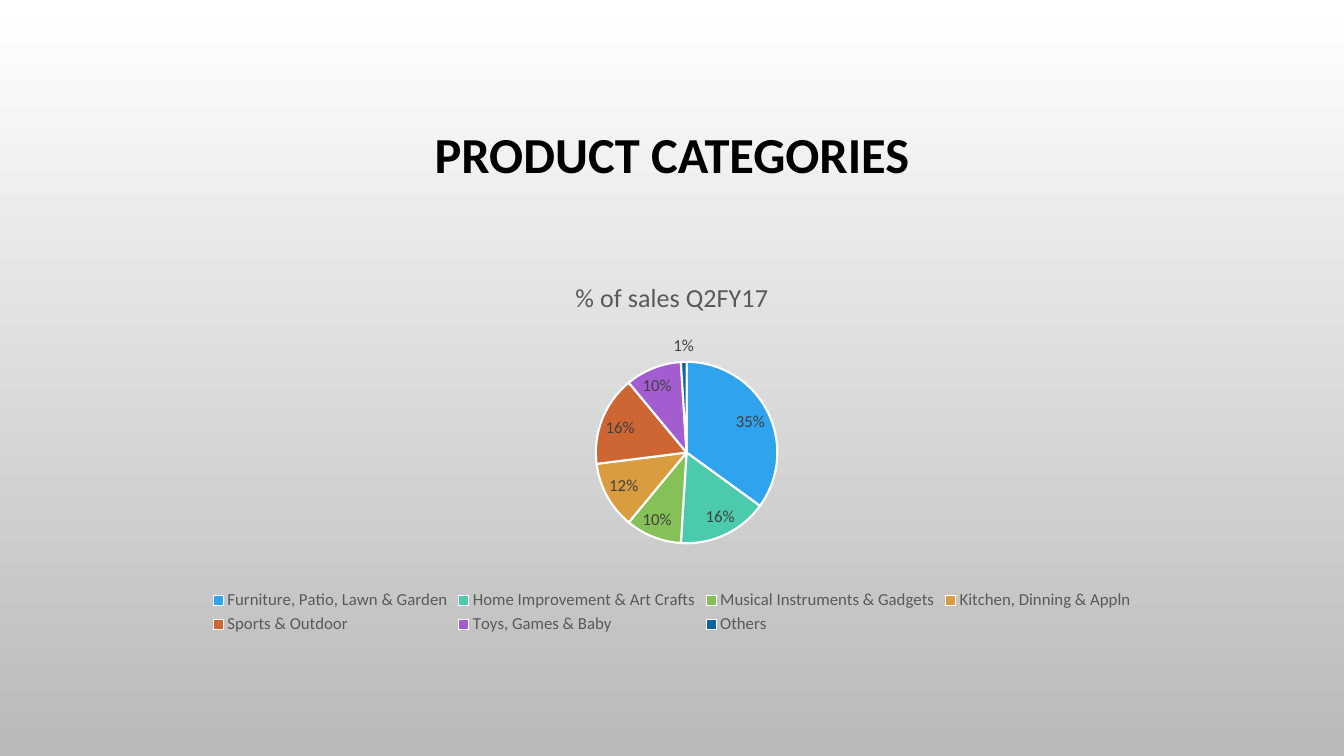
from lxml import etree
from pptx import Presentation
from pptx.chart.data import CategoryChartData
from pptx.dml.color import RGBColor
from pptx.enum.chart import XL_CHART_TYPE, XL_LABEL_POSITION, XL_LEGEND_POSITION
from pptx.enum.text import MSO_ANCHOR, PP_ALIGN
from pptx.oxml.ns import qn
from pptx.util import Inches, Pt

PIE = XL_CHART_TYPE.PIE
BEST_FIT = XL_LABEL_POSITION.BEST_FIT
BOTTOM = XL_LEGEND_POSITION.BOTTOM
MIDDLE = MSO_ANCHOR.MIDDLE
CENTER = PP_ALIGN.CENTER

FONT = "Calibri"
COLORS = {
    "top": "FFFFFF",
    "bottom": "B9B9B9",
    "title": "000000",
    "caption": "595959",
    "label": "404040",
    "border": "FFFFFF",
}
TITLE = "PRODUCT CATEGORIES"
CHART_TITLE = "% of sales Q2FY17"
SALES = [
    ("Furniture, Patio, Lawn & Garden", 0.35, "2FA3EE"),
    ("Home Improvement & Art Crafts", 0.16, "4BCAAD"),
    ("Musical Instruments & Gadgets", 0.1, "86C157"),
    ("Kitchen, Dinning & Appln", 0.12, "D99C3F"),
    ("Sports & Outdoor", 0.16, "CE6633"),
    ("Toys, Games & Baby", 0.1, "A35DD1"),
    ("Others", 0.01, "0D659E"),
]
TITLE_AREA = (1, 0.68, 11.33, 1.75)
CHART_AREA = (1, 2.59, 11.33, 3.74)
PIE_AREA = (4.91, 1.0, 1.8, 1.8)  # inches from the chart's corner


def style(font, size, color, bold=False):
    font.name = FONT
    font.size = Pt(size)
    font.bold = bold
    font.color.rgb = RGBColor.from_string(color)


def paint_background(page):
    fill = page.background.fill
    fill.gradient()
    fill.gradient_angle = 270
    for stop, name in zip(fill.gradient_stops, ("top", "bottom")):
        stop.color.rgb = RGBColor.from_string(COLORS[name])


def add_title(page):
    box = page.shapes.add_textbox(*map(Inches, TITLE_AREA))
    frame = box.text_frame
    frame.word_wrap = True
    frame.vertical_anchor = MIDDLE
    frame.text = TITLE
    para = frame.paragraphs[0]
    para.alignment = CENTER
    para.line_spacing = 0.9
    style(para.runs[0].font, 36, COLORS["title"], bold=True)


def place_pie(chart):
    """Fix the pie's place as fractions of the chart area."""
    plot_area = chart.plots[0]._element.getparent()
    for old in plot_area.findall(qn("c:layout")):
        plot_area.remove(old)
    layout = etree.Element(qn("c:layout"))
    manual = etree.SubElement(layout, qn("c:manualLayout"))
    left, top, width, height = PIE_AREA
    chart_width, chart_height = CHART_AREA[2:]
    settings = [
        ("layoutTarget", "inner"), ("xMode", "edge"), ("yMode", "edge"),
        ("x", left / chart_width), ("y", top / chart_height),
        ("w", width / chart_width), ("h", height / chart_height),
    ]
    for tag, value in settings:
        etree.SubElement(manual, qn(f"c:{tag}")).set("val", str(value))
    plot_area.insert(0, layout)


def add_sales_chart(page):
    data = CategoryChartData(number_format="0%")
    data.categories = [name for name, _, _ in SALES]
    data.add_series("Series 1", [share for _, share, _ in SALES])
    chart = page.shapes.add_chart(PIE, *map(Inches, CHART_AREA), data).chart
    style(chart.font, 10, COLORS["title"])

    chart.has_title = True
    frame = chart.chart_title.text_frame
    frame.text = CHART_TITLE
    style(frame.paragraphs[0].runs[0].font, 18.6, COLORS["caption"])

    chart.has_legend = True
    chart.legend.position = BOTTOM
    chart.legend.include_in_layout = False
    style(chart.legend.font, 12, COLORS["caption"])

    plot = chart.plots[0]
    plot.vary_by_categories = True
    for index, (_, _, color) in enumerate(SALES):
        look = plot.series[0].points[index].format
        look.fill.solid()
        look.fill.fore_color.rgb = RGBColor.from_string(color)
        look.line.color.rgb = RGBColor.from_string(COLORS["border"])
        look.line.width = Pt(1.5)

    labels = plot.series[0].data_labels
    labels.show_value = True
    labels.number_format = "0%"
    labels.number_format_is_linked = False
    labels.position = BEST_FIT
    style(labels.font, 12, COLORS["label"])
    place_pie(chart)


def main():
    deck = Presentation()
    deck.slide_width = Inches(13.33)
    deck.slide_height = Inches(7.5)
    page = deck.slides.add_slide(deck.slide_layouts[6])
    paint_background(page)
    add_title(page)
    add_sales_chart(page)
    deck.save("out.pptx")


if __name__ == "__main__":
    main()
